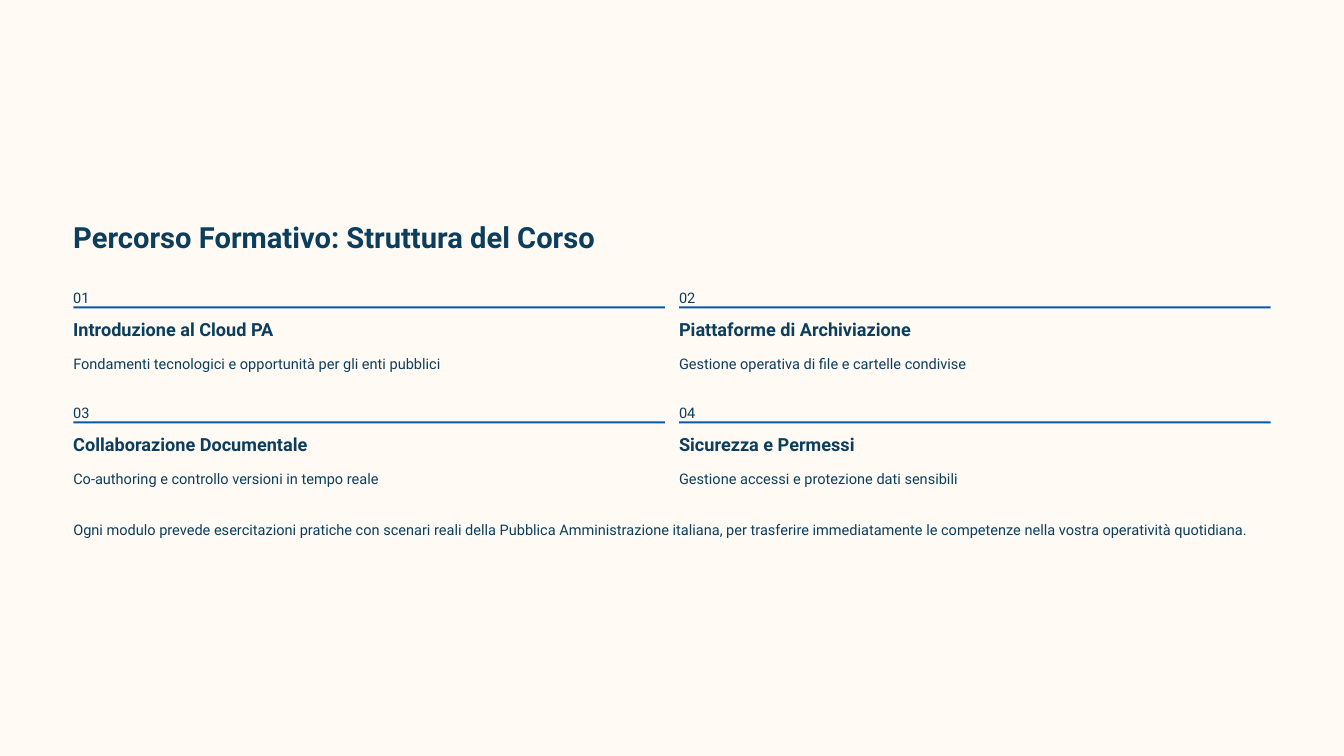
from pptx import Presentation
from pptx.dml.color import RGBColor
from pptx.enum.shapes import MSO_SHAPE
from pptx.enum.text import MSO_ANCHOR, PP_ALIGN
from pptx.util import Inches, Pt

RECTANGLE = MSO_SHAPE.RECTANGLE
TOP = MSO_ANCHOR.TOP
LEFT = PP_ALIGN.LEFT

CREAM = RGBColor(0xFF, 0xFA, 0xF4)
NAVY = RGBColor(0x0B, 0x3E, 0x5D)
BLUE = RGBColor(0x08, 0x58, 0xA9)
FONT = "Roboto"

TITLE = "Percorso Formativo: Struttura del Corso"
MODULES = [
    ("Introduzione al Cloud PA", 3.0,
     "Fondamenti tecnologici e opportunità per gli enti pubblici"),
    ("Piattaforme di Archiviazione", 3.47,
     "Gestione operativa di file e cartelle condivise"),
    ("Collaborazione Documentale", 3.5,
     "Co-authoring e controllo versioni in tempo reale"),
    ("Sicurezza e Permessi", 2.71,
     "Gestione accessi e protezione dati sensibili"),
]
CLOSING = (
    "Ogni modulo prevede esercitazioni pratiche con scenari reali della "
    "Pubblica Amministrazione italiana, per trasferire immediatamente le "
    "competenze nella vostra operatività quotidiana."
)

PAGE_WIDTH, PAGE_HEIGHT = 20, 11.25
MARGIN = 1.09
GAP = 0.21
COLUMNS = 2
CONTENT_WIDTH = PAGE_WIDTH - 2 * MARGIN
COLUMN_WIDTH = (CONTENT_WIDTH - GAP * (COLUMNS - 1)) / COLUMNS
GRID_TOP = 4.22
ROW_PITCH = 1.71

TITLE_STYLE = (31.2, 38.8, True)
HEADING_STYLE = (19.4, 24.4, True)
BODY_STYLE = (15.6, 25, False)


def add_text(page, text, left, top, width, height, style):
    size, line_height, bold = style
    box = page.shapes.add_textbox(
        Inches(left), Inches(top), Inches(width), Inches(height))
    frame = box.text_frame
    frame.margin_left = frame.margin_right = 0
    frame.margin_top = frame.margin_bottom = 0
    frame.word_wrap = False
    frame.vertical_anchor = TOP
    para = frame.paragraphs[0]
    para.alignment = LEFT
    para.line_spacing = Pt(line_height)
    span = para.add_run()
    span.text = text
    span.font.name = FONT
    span.font.size = Pt(size)
    span.font.bold = bold
    span.font.color.rgb = NAVY


def add_panel(page, left, top, width, height, color):
    panel = page.shapes.add_shape(
        RECTANGLE, Inches(left), Inches(top), Inches(width), Inches(height))
    panel.shadow.inherit = False
    panel.fill.solid()
    panel.fill.fore_color.rgb = color
    panel.line.fill.background()


def add_module(page, index, heading, heading_width, summary):
    row, column = divmod(index, COLUMNS)
    left = MARGIN + column * (COLUMN_WIDTH + GAP)
    top = GRID_TOP + row * ROW_PITCH
    add_text(page, f"{index + 1:02}", left, top, 0.26, 0.27, BODY_STYLE)
    add_panel(page, left, top + 0.34, COLUMN_WIDTH, 0.03, BLUE)
    add_text(page, heading, left, top + 0.51, heading_width, 0.34, HEADING_STYLE)
    add_text(page, summary, left, top + 0.98, COLUMN_WIDTH, 0.35, BODY_STYLE)


def main():
    deck = Presentation()
    deck.slide_width = Inches(PAGE_WIDTH)
    deck.slide_height = Inches(PAGE_HEIGHT)
    page = deck.slides.add_slide(deck.slide_layouts[6])

    add_panel(page, 0, 0, PAGE_WIDTH, PAGE_HEIGHT, CREAM)
    add_text(page, TITLE, MARGIN, 3.24, 7.77, 0.54, TITLE_STYLE)
    for index, module in enumerate(MODULES):
        add_module(page, index, *module)
    add_text(page, CLOSING, MARGIN, 7.66, CONTENT_WIDTH, 0.35, BODY_STYLE)
    deck.save("out.pptx")


if __name__ == "__main__":
    main()
